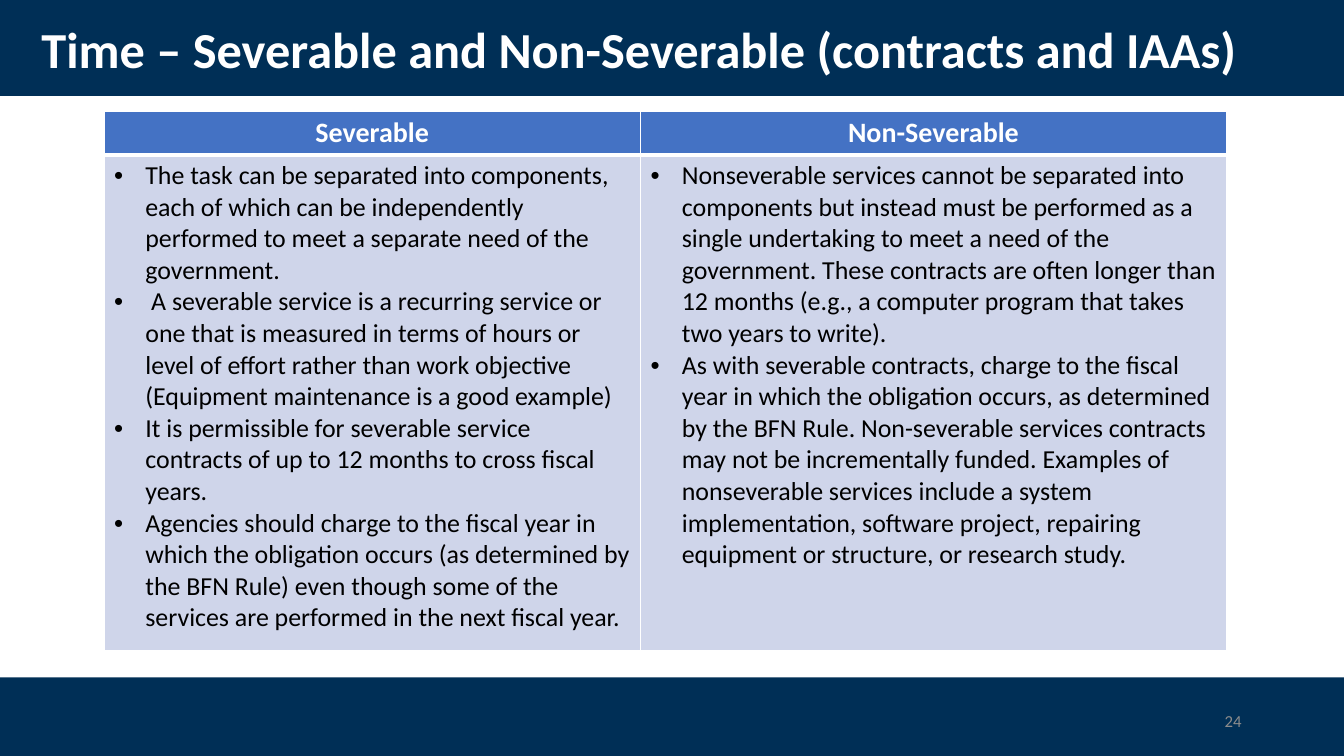
from dataclasses import dataclass

from lxml.etree import SubElement
from pptx import Presentation
from pptx.dml.color import RGBColor
from pptx.enum.shapes import MSO_SHAPE
from pptx.enum.text import MSO_ANCHOR, MSO_AUTO_SIZE, PP_ALIGN
from pptx.oxml.ns import qn
from pptx.slide import Slide
from pptx.table import _Cell
from pptx.text.text import _Paragraph
from pptx.util import Cm, Pt

NAVY = RGBColor(0x00, 0x2F, 0x56)
BLUE = RGBColor(0x44, 0x72, 0xC4)
PALE = RGBColor(0xCF, 0xD5, 0xEA)
WHITE = RGBColor(0xFF, 0xFF, 0xFF)
BLACK = RGBColor(0x00, 0x00, 0x00)
GRAY = RGBColor(0x8C, 0x8C, 0x8C)
FONT = "Calibri"
SLIDE_W, SLIDE_H = Cm(33.87), Cm(19.05)
HEADER_H, BODY_H = Cm(1.1), Cm(12.48)
BULLET_INDENT = Cm(0.79)


@dataclass
class Band:
    top: float
    height: float


@dataclass
class Column:
    heading: str
    width: float
    points: list[str]


BANDS = [Band(0, 2.42), Band(17.07, 1.98)]
COLUMNS = [
    Column("Severable", 13.52, [
        "The task can be separated into components, each of which can be "
        "independently performed to meet a separate need of the government.",
        " A severable service is a recurring service or one that is measured in "
        "terms of hours or level of effort rather than work objective "
        "(Equipment maintenance is a good example)",
        "It is permissible for severable service contracts of up to 12 months "
        "to cross fiscal years.",
        "Agencies should charge to the fiscal year in which the obligation "
        "occurs (as determined by the BFN Rule) even though some of the "
        "services are performed in the next fiscal year.",
    ]),
    Column("Non-Severable", 14.77, [
        "Nonseverable services cannot be separated into components but instead "
        "must be performed as a single undertaking to meet a need of the "
        "government. These contracts are often longer than 12 months (e.g., a "
        "computer program that takes two years to write).",
        "As with severable contracts, charge to the fiscal year in which the "
        "obligation occurs, as determined by the BFN Rule. Non-severable "
        "services contracts may not be incrementally funded. Examples of "
        "nonseverable services include a system implementation, software "
        "project, repairing equipment or structure, or research study.",
    ]),
]


def format_runs(p: _Paragraph, size: float, color: RGBColor, bold: bool = False) -> None:
    for r in p.runs:
        r.font.name = FONT
        r.font.size = Pt(size)
        r.font.bold = bold
        r.font.color.rgb = color


def add_band(slide: Slide, band: Band) -> None:
    sp = slide.shapes.add_shape(MSO_SHAPE.RECTANGLE, 0, Cm(band.top), SLIDE_W, Cm(band.height))
    sp.shadow.inherit = False
    sp.fill.solid()
    sp.fill.fore_color.rgb = NAVY
    sp.line.fill.background()


def add_bullet(p: _Paragraph) -> None:
    pPr = p._p.get_or_add_pPr()
    pPr.set("marL", str(BULLET_INDENT))
    pPr.set("indent", str(-BULLET_INDENT))
    SubElement(pPr, qn("a:buFont"), typeface="Arial")
    SubElement(pPr, qn("a:buChar"), char="•")


def style_cell(cell: _Cell, fill: RGBColor, top: int, bottom: int) -> None:
    tcPr = cell._tc.get_or_add_tcPr()
    for side, width in (("L", 1), ("R", 1), ("T", top), ("B", bottom)):
        ln = SubElement(tcPr, qn(f"a:ln{side}"), w=str(Pt(width)))
        SubElement(SubElement(ln, qn("a:solidFill")), qn("a:srgbClr"), val=str(WHITE))
    cell.fill.solid()
    cell.fill.fore_color.rgb = fill


def add_comparison(slide: Slide, columns: list[Column]) -> None:
    width = Cm(sum(c.width for c in columns))
    frame = slide.shapes.add_table(2, len(columns), Cm(2.62), Cm(2.8), width, HEADER_H + BODY_H)
    table = frame.table
    table.horz_banding = False
    table.rows[0].height, table.rows[1].height = HEADER_H, BODY_H
    for i, column in enumerate(columns):
        table.columns[i].width = Cm(column.width)
        head, body = table.cell(0, i), table.cell(1, i)
        style_cell(head, BLUE, top=1, bottom=3)
        style_cell(body, PALE, top=3, bottom=1)

        p = head.text_frame.paragraphs[0]
        p.text = column.heading
        p.alignment = PP_ALIGN.CENTER
        format_runs(p, 20, WHITE, bold=True)

        body.text_frame.text = "\n".join(column.points)
        for p in body.text_frame.paragraphs:
            add_bullet(p)
            format_runs(p, 18.5, BLACK)


def set_title(slide: Slide, text: str) -> None:
    title = slide.shapes.title
    title.left, title.top, title.width, title.height = Cm(0.79), Cm(0.46), Cm(30.73), Cm(1.73)
    tf = title.text_frame
    tf.text = text
    tf.word_wrap = True
    tf.auto_size = MSO_AUTO_SIZE.NONE
    tf.vertical_anchor = MSO_ANCHOR.MIDDLE
    p = tf.paragraphs[0]
    p.alignment = PP_ALIGN.LEFT
    p.line_spacing = 0.9
    format_runs(p, 36, WHITE, bold=True)
    # Bring the title in front of the bands
    slide.shapes._spTree.append(title._element)


def add_page_number(slide: Slide, number: int) -> None:
    tf = slide.shapes.add_textbox(Cm(23.92), Cm(17.65), Cm(7.62), Cm(1.01)).text_frame
    tf.text = str(number)
    tf.word_wrap = True
    tf.vertical_anchor = MSO_ANCHOR.MIDDLE
    p = tf.paragraphs[0]
    p.alignment = PP_ALIGN.RIGHT
    format_runs(p, 12, GRAY)


def main() -> None:
    prs = Presentation()
    prs.slide_width, prs.slide_height = SLIDE_W, SLIDE_H
    s = prs.slides.add_slide(prs.slide_layouts[5])

    # Header and footer bands
    for band in BANDS:
        add_band(s, band)

    # Title, page number and comparison table
    set_title(s, "Time – Severable and Non-Severable (contracts and IAAs)")
    add_page_number(s, 24)
    add_comparison(s, COLUMNS)
    prs.save("out.pptx")


if __name__ == "__main__":
    main()
